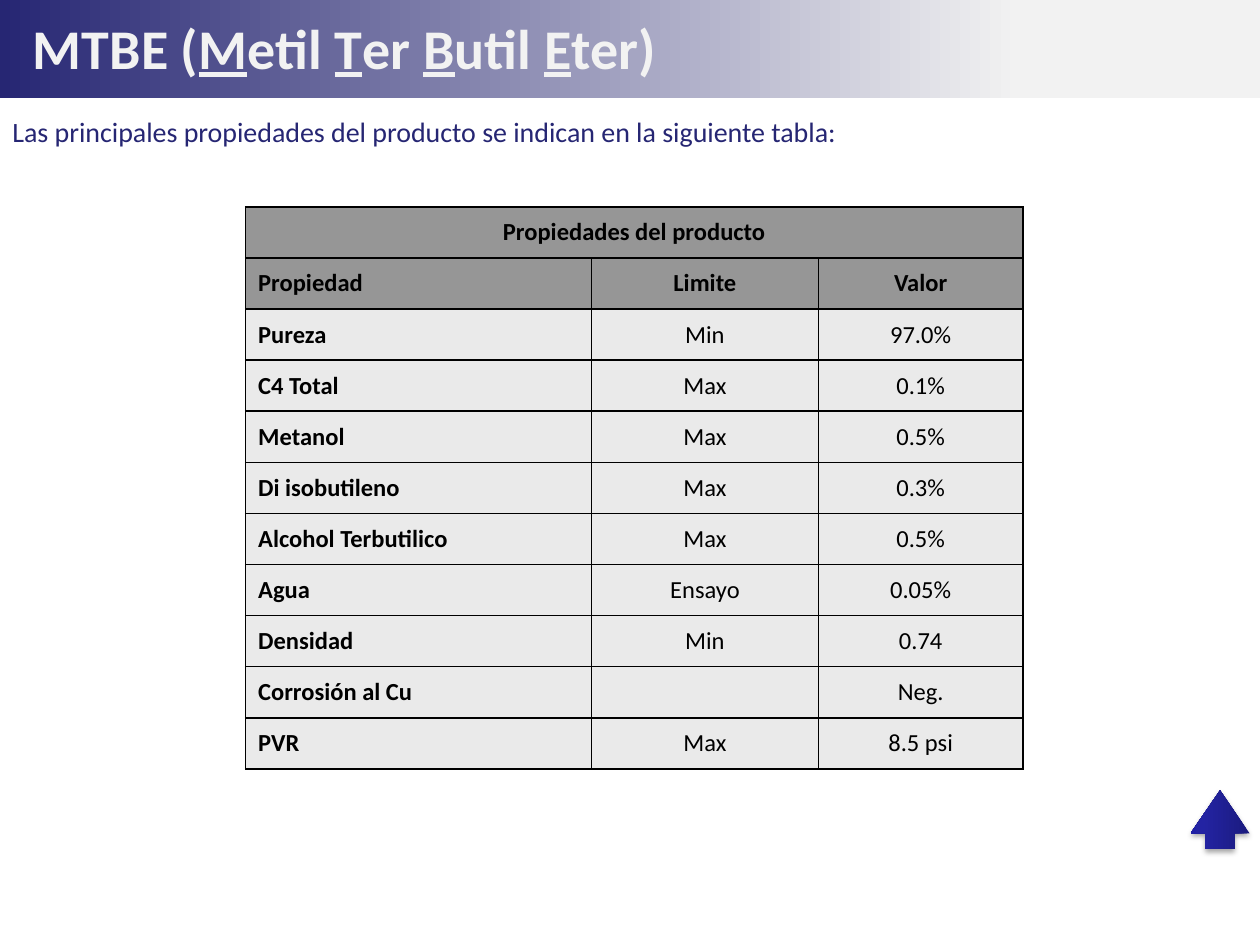
"""Build the MTBE product properties slide."""
from lxml import etree
from pptx import Presentation
from pptx import util as u
from pptx.dml.color import RGBColor
from pptx.enum import shapes, text
from pptx.oxml import parse_xml
from pptx.oxml.ns import nsdecls, qn

NAVY, PALE, BLACK = "262673", "F2F2F2", "000000"
HEADER_GREY, BODY_GREY = "969696", "EAEAEA"

TITLE = ["MTBE (", "M", "etil ", "T", "er ", "B", "util ", "E", "ter)"]
INTRO = "Las principales propiedades del producto se indican en la siguiente tabla:"
PROPERTIES = [
    ("Propiedades del producto", "", ""),
    ("Propiedad", "Limite", "Valor"),
    ("Pureza", "Min", "97.0%"),
    ("C4 Total", "Max", "0.1%"),
    ("Metanol", "Max", "0.5%"),
    ("Di isobutileno", "Max", "0.3%"),
    ("Alcohol Terbutilico", "Max", "0.5%"),
    ("Agua", "Ensayo", "0.05%"),
    ("Densidad", "Min", "0.74"),
    ("Corrosión al Cu", "", "Neg."),
    ("PVR", "Max", "8.5 psi"),
]
HEADER_ROWS = 2
COLUMN_WIDTHS = [6.97, 4.58, 4.12]
ROW_HEIGHT = 1.03


def cm(*lengths):
    return [u.Cm(length) for length in lengths]


def style(run, size, color, bold=False):
    run.font.name = "Calibri"
    run.font.size = u.Pt(size)
    run.font.bold = bold
    run.font.color.rgb = RGBColor.from_string(color)


def add_gradient_shape(slide, preset, box, stops, angle):
    shape = slide.shapes.add_shape(preset, *cm(*box))
    shape.fill.background()
    shape.line.fill.background()
    shape.shadow.inherit = False
    stop_xml = "".join(
        f'<a:gs pos="{position * 1000}"><a:srgbClr val="{color}"/></a:gs>'
        for position, color in stops)
    gradient = parse_xml(
        f'<a:gradFill {nsdecls("a")} rotWithShape="1"><a:gsLst>{stop_xml}</a:gsLst>'
        f'<a:lin ang="{angle * 60000}" scaled="0"/></a:gradFill>')
    properties = shape.element.spPr
    properties.replace(properties.find(qn("a:noFill")), gradient)
    return shape


def add_title(slide):
    title = slide.shapes.title
    title.left, title.top, title.width, title.height = cm(0.41, 0.41, 20.04, 1.19)
    frame = title.text_frame
    frame.vertical_anchor = text.MSO_ANCHOR.MIDDLE
    frame.auto_size = text.MSO_AUTO_SIZE.NONE
    heading = frame.paragraphs[0]
    heading.alignment = text.PP_ALIGN.LEFT
    heading.line_spacing = 0.95
    for index, part in enumerate(TITLE):
        run = heading.add_run()
        run.text = part
        style(run, 32, PALE, bold=True)
        run.font.underline = index % 2 == 1


def add_intro(slide):
    frame = slide.shapes.add_textbox(*cm(0, 2.18, 24.99, 0.94)).text_frame
    frame.word_wrap = True
    frame.text = INTRO
    frame.paragraphs[0].alignment = text.PP_ALIGN.JUSTIFY
    style(frame.paragraphs[0].runs[0], 16, NAVY)


def add_borders(cell):
    properties = cell._tc.get_or_add_tcPr()
    for index, side in enumerate("LRTB"):
        border = etree.Element(qn(f"a:ln{side}"), w=str(u.Pt(1)))
        fill = etree.SubElement(border, qn("a:solidFill"))
        etree.SubElement(fill, qn("a:srgbClr"), val=BLACK)
        properties.insert(index, border)


def add_properties(slide):
    size = sum(COLUMN_WIDTHS), ROW_HEIGHT * len(PROPERTIES)
    table = slide.shapes.add_table(
        len(PROPERTIES), len(COLUMN_WIDTHS), *cm(4.95, 4.17, *size)).table
    for column, width in zip(table.columns, COLUMN_WIDTHS):
        column.width = u.Cm(width)
    for r, row in enumerate(PROPERTIES):
        table.rows[r].height = u.Cm(ROW_HEIGHT)
        header = r < HEADER_ROWS
        for c, value in enumerate(row):
            cell = table.cell(r, c)
            cell.fill.solid()
            cell.fill.fore_color.rgb = RGBColor.from_string(
                HEADER_GREY if header else BODY_GREY)
            add_borders(cell)
            cell.vertical_anchor = text.MSO_ANCHOR.MIDDLE
            cell.text_frame.text = value
            entry = cell.text_frame.paragraphs[0]
            centred = c > 0 or r == 0
            entry.alignment = text.PP_ALIGN.CENTER if centred else text.PP_ALIGN.LEFT
            for run in entry.runs:
                style(run, 14, BLACK, bold=header or c == 0)
    table.cell(0, 0).merge(table.cell(0, len(COLUMN_WIDTHS) - 1))


def add_up_arrow(slide):
    arrow = add_gradient_shape(
        slide, shapes.MSO_SHAPE.RIGHT_ARROW, (24, 15.93, 1.19, 1.19),
        [(0, "1B1B7E"), (80, "2323A3"), (100, "2020A6")], 270)
    arrow.rotation = 270
    arrow.adjustments[0], arrow.adjustments[1] = 0.5, 0.73
    arrow.element.spPr.find(qn("a:effectLst")).append(parse_xml(
        f'<a:outerShdw {nsdecls("a")} blurRad="{u.Pt(3.1)}" dist="{u.Pt(1.8)}" '
        f'dir="5400000" rotWithShape="0"><a:srgbClr val="{BLACK}">'
        '<a:alpha val="35000"/></a:srgbClr></a:outerShdw>'))


def main():
    deck = Presentation()
    deck.slide_width, deck.slide_height = cm(25.4, 19.05)
    slide = deck.slides.add_slide(deck.slide_layouts[5])
    band = add_gradient_shape(
        slide, shapes.MSO_SHAPE.RECTANGLE, (0, 0, 25.4, 1.98),
        [(0, NAVY), (81, PALE), (100, PALE)], 0)
    slide.shapes.title.element.addprevious(band.element)
    add_title(slide)
    add_intro(slide)
    add_properties(slide)
    add_up_arrow(slide)
    deck.save("out.pptx")


if __name__ == "__main__":
    main()
